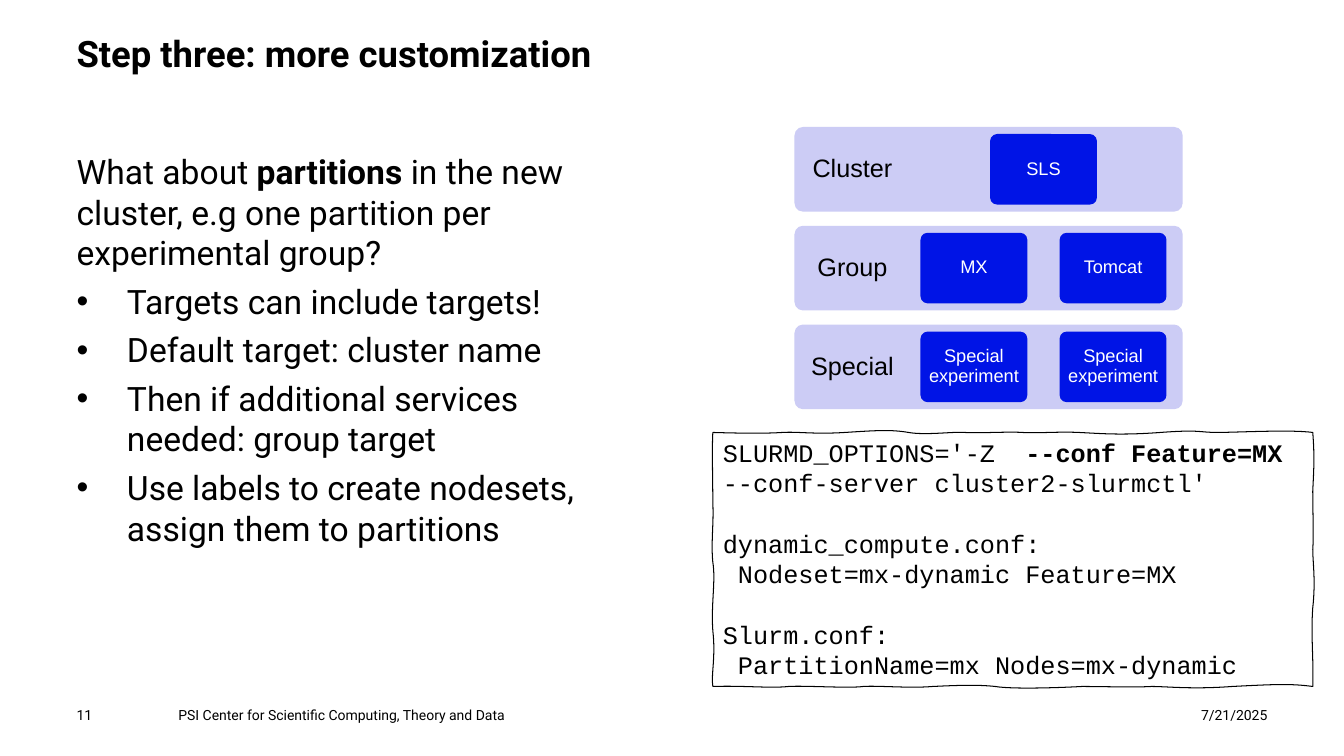
from pptx import Presentation
from pptx.dml.color import RGBColor
from pptx.enum.shapes import MSO_SHAPE
from pptx.enum.text import MSO_ANCHOR, PP_ALIGN
from pptx.oxml.ns import qn
from pptx.oxml.xmlchemy import OxmlElement
from pptx.util import Emu, Pt

BLACK, WHITE, BLUE, LAVENDER = "000000", "FFFFFF", "0014E6", "CCCCF5"
BAND_LEFT, BAND_TOP, BAND_WIDTH, BAND_HEIGHT, BAND_PITCH = 788, 126, 385, 84, 98
TILE_WIDTH, TILE_HEIGHT, TILE_PITCH, TILES_CENTER = 106, 70, 138, 1035
LABEL_WIDTH = 115

BANDS = [
    ("Cluster", ["SLS"]),
    ("Group", ["MX", "Tomcat"]),
    ("Special", ["Special experiment", "Special experiment"]),
]
QUESTION = [
    ("What about ", False),
    ("partitions ", True),
    ("in the new cluster, e.g one partition per experimental group?", False),
]
BULLETS = [
    "Targets can include targets!",
    "Default target: cluster name",
    "Then if additional services needed: group target",
    "Use labels to create nodesets, assign them to partitions",
]
# Paragraphs of the code box, each with the space before it in points
CODE = [
    (0, [("SLURMD_OPTIONS='-Z  ", False), ("--conf Feature=MX ", True),
         ("--conf-server cluster2-slurmctl'", False)]),
    (21.6, [("dynamic_compute.conf:", False)]),
    (0, [(" Nodeset=mx-dynamic Feature=MX", False)]),
    (21.6, [("Slurm.conf:", False)]),
    (0, [(" PartitionName=mx Nodes=mx-dynamic", False)]),
]
# Hand-drawn frame: each row is a curve, two control points and its end
FRAME_START = (707, 429)
FRAME_CURVES = [
    ((740, 430), (761, 430), (776, 429)),
    ((791, 428), (807, 431), (838, 429)),
    ((869, 427), (884, 426), (901, 429)),
    ((918, 432), (946, 428), (957, 429)),
    ((969, 430), (1000, 428), (1014, 429)),
    ((1028, 430), (1050, 428), (1070, 429)),
    ((1091, 430), (1111, 432), (1151, 429)),
    ((1191, 426), (1189, 429), (1207, 429)),
    ((1226, 429), (1280, 426), (1302, 429)),
    ((1304, 454), (1303, 466), (1302, 487)),
    ((1302, 508), (1303, 532), (1302, 545)),
    ((1302, 558), (1305, 576), (1302, 603)),
    ((1300, 630), (1303, 654), (1302, 681)),
    ((1280, 678), (1262, 679), (1222, 681)),
    ((1182, 684), (1158, 681), (1142, 681)),
    ((1126, 682), (1091, 681), (1073, 681)),
    ((1056, 682), (1005, 684), (987, 681)),
    ((969, 679), (947, 680), (925, 681)),
    ((902, 683), (871, 680), (856, 681)),
    ((842, 683), (799, 680), (782, 681)),
    ((764, 683), (738, 680), (707, 681)),
    ((705, 670), (710, 652), (707, 626)),
    ((705, 600), (710, 576), (707, 558)),
    ((705, 539), (708, 519), (707, 500)),
    ((707, 480), (706, 444), (707, 429)),
]


def px(length):
    """Turn px, a hundred to the inch, into EMU."""
    return Emu(length * 9144)


def color(value):
    return RGBColor.from_string(value)


def set_frame(text_frame, inset=0, anchor=MSO_ANCHOR.TOP):
    text_frame.word_wrap = True
    text_frame.vertical_anchor = anchor
    text_frame.margin_left = text_frame.margin_right = px(inset)
    text_frame.margin_top = text_frame.margin_bottom = px(inset)


def write_runs(paragraph, runs, size, font="Roboto", ink=BLACK, align=PP_ALIGN.LEFT):
    """Fill a paragraph with (text, bold) runs."""
    paragraph.alignment = align
    for text, bold in runs:
        run = paragraph.add_run()
        run.text = text
        run.font.size = Pt(size)
        run.font.name = font
        run.font.bold = bold
        run.font.color.rgb = color(ink)


def add_text_frame(slide, left, top, width, height):
    box = slide.shapes.add_textbox(px(left), px(top), px(width), px(height))
    set_frame(box.text_frame)
    return box.text_frame


def add_line(slide, left, top, width, height, text, size, bold=False, align=PP_ALIGN.LEFT):
    text_frame = add_text_frame(slide, left, top, width, height)
    write_runs(text_frame.paragraphs[0], [(text, bold)], size, align=align)


def add_bullet(paragraph):
    properties = paragraph._p.get_or_add_pPr()
    properties.set("marL", str(px(50)))
    properties.set("indent", str(px(-50)))
    for tag, name, value in (("a:buFont", "typeface", "Arial"), ("a:buChar", "char", "•")):
        element = OxmlElement(tag)
        element.set(name, value)
        properties.append(element)


def add_body(slide):
    text_frame = add_text_frame(slide, 76, 150, 516, 508)
    write_runs(text_frame.paragraphs[0], QUESTION, 24)
    for text in BULLETS:
        paragraph = text_frame.add_paragraph()
        paragraph.space_before = Pt(6)
        add_bullet(paragraph)
        write_runs(paragraph, [(text, False)], 24)


def add_rounded(slide, left, top, width, height, fill):
    shape = slide.shapes.add_shape(
        MSO_SHAPE.ROUNDED_RECTANGLE, px(left), px(top), px(width), px(height))
    shape.adjustments[0] = 0.1
    shape.shadow.inherit = False
    shape.fill.solid()
    shape.fill.fore_color.rgb = color(fill)
    shape.line.fill.background()
    return shape


def write_label(text_frame, text, size, ink, inset):
    set_frame(text_frame, inset, MSO_ANCHOR.MIDDLE)
    paragraph = text_frame.paragraphs[0]
    paragraph.line_spacing = 0.9
    write_runs(paragraph, [(text, False)], size, "Arial", ink, PP_ALIGN.CENTER)


def add_band(slide, top, name, tiles):
    add_rounded(slide, BAND_LEFT, top, BAND_WIDTH, BAND_HEIGHT, LAVENDER)
    label = add_text_frame(slide, BAND_LEFT, top, LABEL_WIDTH, BAND_HEIGHT)
    write_label(label, name, 18, BLACK, 14)
    gap = TILE_PITCH - TILE_WIDTH
    first_left = TILES_CENTER - (len(tiles) * TILE_PITCH - gap) // 2
    tile_top = top + (BAND_HEIGHT - TILE_HEIGHT) // 2
    for column, text in enumerate(tiles):
        tile = add_rounded(slide, first_left + column * TILE_PITCH, tile_top,
                           TILE_WIDTH, TILE_HEIGHT, BLUE)
        write_label(tile.text_frame, text, 13, WHITE, 5)


def bend_lines(shape):
    """Turn each straight side of the frame into its curve."""
    lines = list(shape._element.iter(qn("a:lnTo")))
    for line, controls in zip(lines, FRAME_CURVES):
        curve = OxmlElement("a:cubicBezTo")
        for x, y in controls:
            point = OxmlElement("a:pt")
            point.set("x", str(px(x - FRAME_START[0])))
            point.set("y", str(px(y - FRAME_START[1])))
            curve.append(point)
        line.getparent().replace(line, curve)


def add_code_box(slide):
    builder = slide.shapes.build_freeform(*map(px, FRAME_START))
    builder.add_line_segments([(px(x), px(y)) for _, _, (x, y) in FRAME_CURVES])
    box = builder.convert_to_shape()
    bend_lines(box)
    box.shadow.inherit = False
    box.fill.background()
    box.line.color.rgb = color(BLACK)
    box.line.width = Pt(0.75)
    text_frame = box.text_frame
    set_frame(text_frame, 10)
    text_frame.margin_top = text_frame.margin_bottom = px(5)
    for index, (space, runs) in enumerate(CODE):
        paragraph = text_frame.add_paragraph() if index else text_frame.paragraphs[0]
        if space:
            paragraph.space_before = Pt(space)
        write_runs(paragraph, runs, 18, "Courier New")


def main():
    presentation = Presentation()
    presentation.slide_width, presentation.slide_height = px(1333), px(750)
    slide = presentation.slides.add_slide(presentation.slide_layouts[6])
    add_line(slide, 76, 31, 980, 89, "Step three: more customization", 26, bold=True)
    add_line(slide, 177, 701, 880, 16, "PSI Center for Scientific Computing, Theory and Data", 10)
    add_line(slide, 76, 701, 77, 16, "11", 10)
    add_line(slide, 1080, 701, 177, 16, "7/21/2025", 10, align=PP_ALIGN.RIGHT)
    add_body(slide)
    add_code_box(slide)
    for row, (name, tiles) in enumerate(BANDS):
        add_band(slide, BAND_TOP + row * BAND_PITCH, name, tiles)
    presentation.save("out.pptx")


if __name__ == "__main__":
    main()
